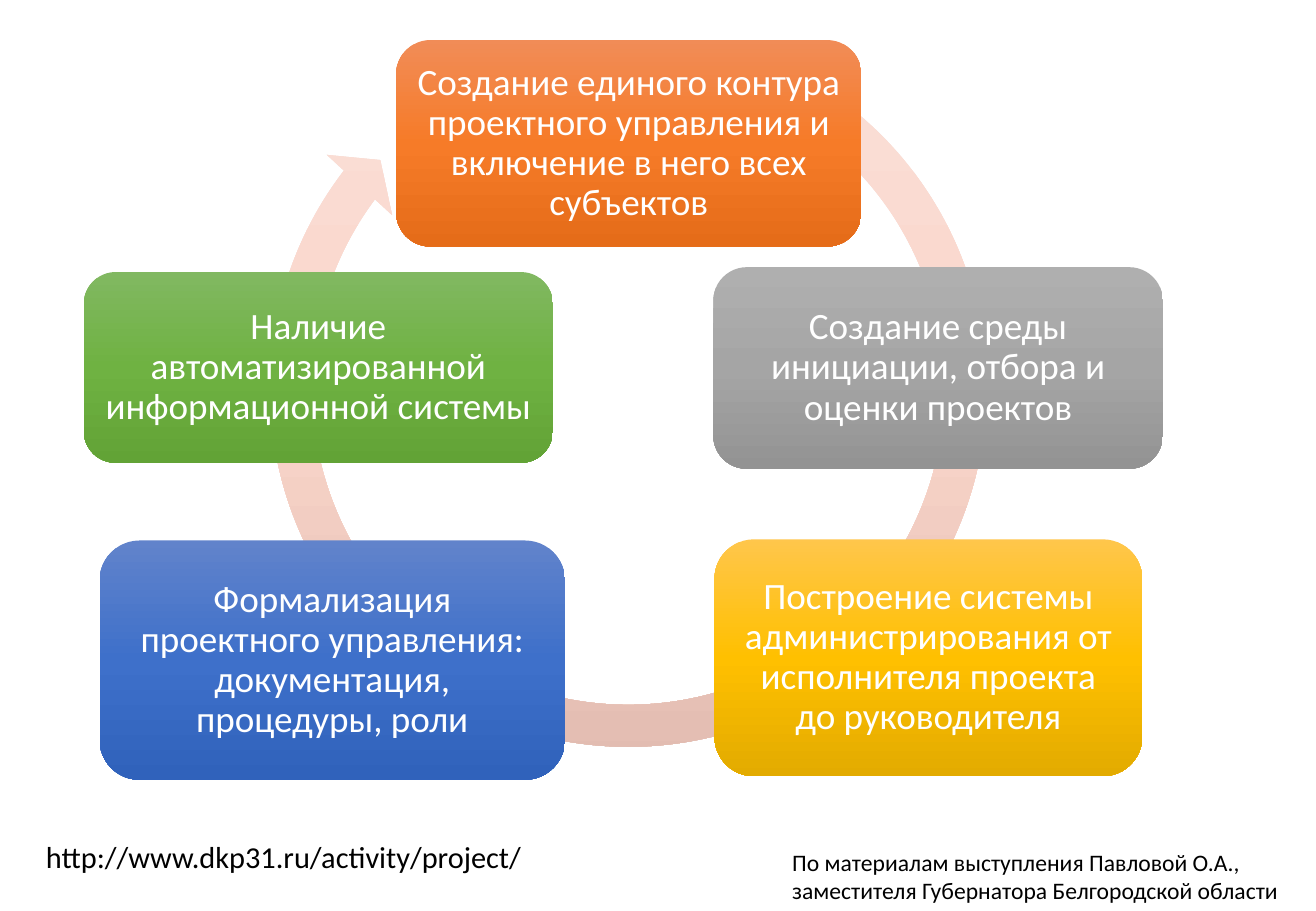
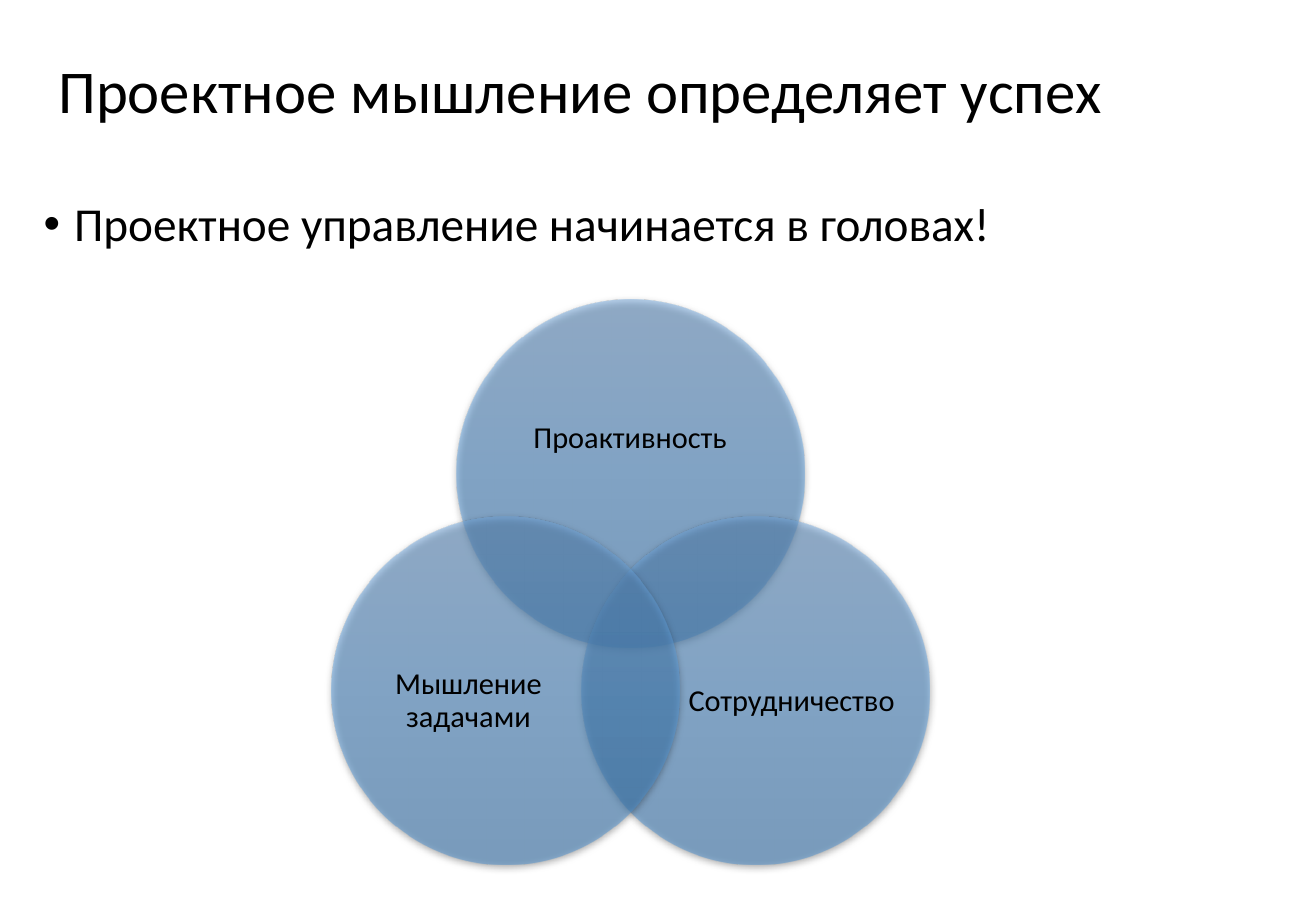
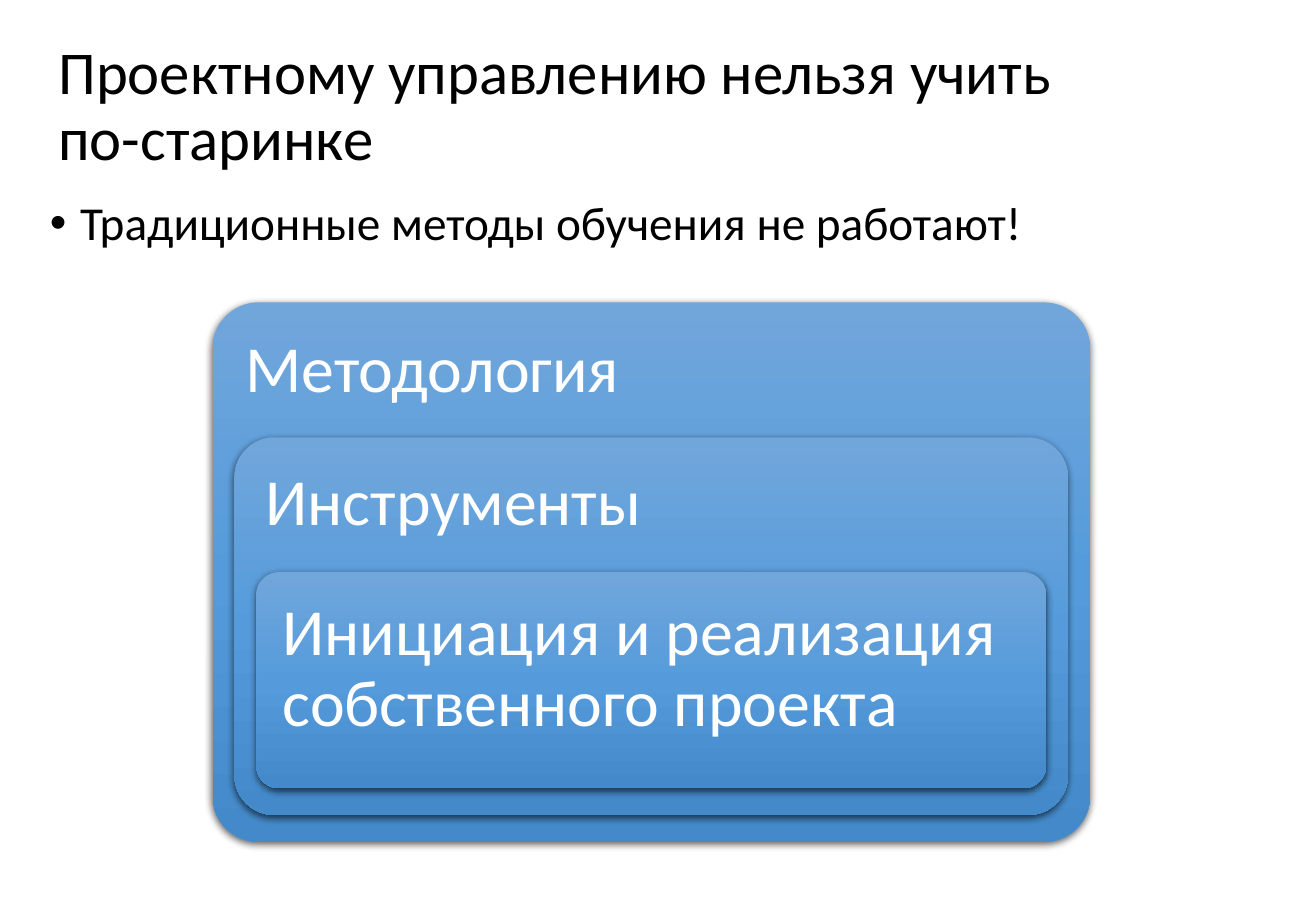
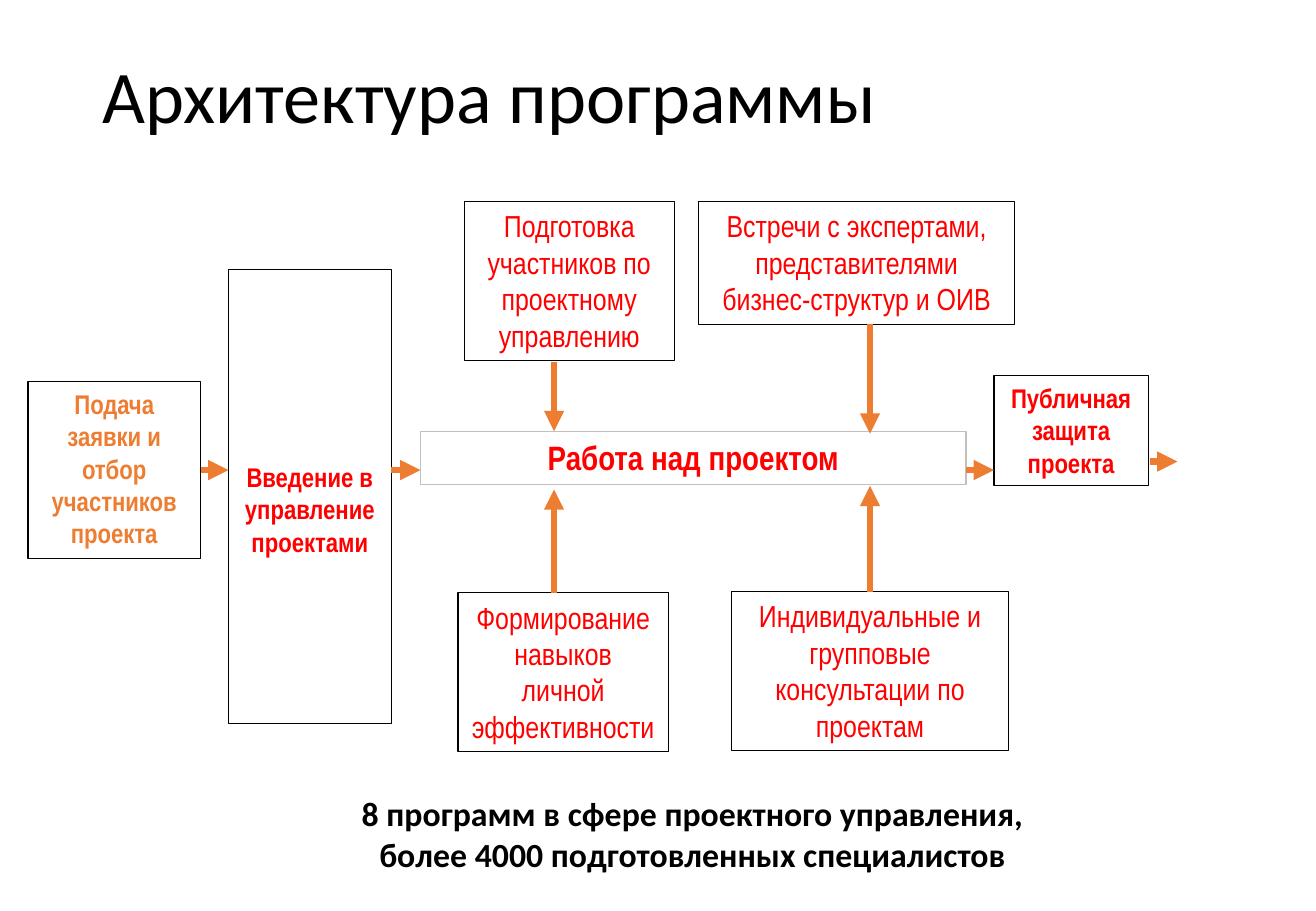
"""Build four slides on project management: a cycle, a Venn diagram, nested frames and a flow chart."""
import dataclasses
import math
import typing

import pptx
import pptx.dml.color
import pptx.enum.shapes
import pptx.enum.text
import pptx.oxml
import pptx.oxml.ns
import pptx.util

Inches = pptx.util.Inches
Pt = pptx.util.Pt
KIND = pptx.enum.shapes.MSO_SHAPE
ALIGN = pptx.enum.text.PP_ALIGN
ANCHOR = pptx.enum.text.MSO_ANCHOR
Area = typing.Tuple[float, float, float, float]
Point = typing.Tuple[float, float]

COLORS = {
    "black": "000000",
    "white": "FFFFFF",
    "red": "FF0000",
    "orange": "ED7D31",
    "silver": "C0C0C0",
}
FADES = {
    "ring": ("FAE0D8", "FAD6CB", "E2BCB1"),
    "orange": ("F18C57", "F67B28", "E56C19"),
    "gray": ("AFAFAF", "A5A5A5", "939393"),
    "gold": ("FFC64B", "FFC000", "E3AB00"),
    "blue": ("6183CB", "3E70CA", "3062BB"),
    "green": ("81B861", "6FB242", "62A336"),
    "sky": ("71A6DB", "559BDB", "448ACA"),
}


@dataclasses.dataclass(frozen=True)
class Look:
    size: float
    color: str = "black"
    font: str = "Calibri"
    bold: bool = False
    align: typing.Any = ALIGN.LEFT
    anchor: typing.Any = ANCHOR.TOP
    space: float = 1.0
    pad: Area = (0.1, 0.05, 0.1, 0.05)


@dataclasses.dataclass(frozen=True)
class Card:
    area: Area
    text: str
    fade: str


@dataclasses.dataclass(frozen=True)
class Step:
    area: Area
    text: str
    look: Look
    edge: str = "black"


@dataclasses.dataclass(frozen=True)
class Arrow:
    start: Point
    end: Point
    step: str = ""
    side: int = 0


TITLE = Look(36, anchor=ANCHOR.MIDDLE, space=0.9)
BODY = Look(28, space=0.9)
CARD = Look(22, "white", align=ALIGN.CENTER, anchor=ANCHOR.MIDDLE, space=0.9, pad=(0.09,) * 4)
VENN = Look(18, align=ALIGN.CENTER, anchor=ANCHOR.MIDDLE, space=0.9, pad=(0,) * 4)
NEST = Look(39, "white", space=0.9, pad=(0.16,) * 4)
TASK = Look(18, "red", "Arial Narrow", align=ALIGN.CENTER)
STAGE = dataclasses.replace(TASK, size=16, bold=True)

CARDS = (
    Card((3.26, 0.33, 3.83, 1.7), "Создание единого контура проектного управления и включение в него всех субъектов", "orange"),
    Card((5.87, 2.2, 3.7, 1.66), "Создание среды инициации, отбора и оценки проектов", "gray"),
    Card((5.88, 4.44, 3.52, 1.95), "Построение системы администрирования от исполнителя проекта до руководителя", "gold"),
    Card((0.82, 4.45, 3.83, 1.97), "Формализация проектного управления: документация, процедуры, роли", "blue"),
    Card((0.69, 2.24, 3.86, 1.57), "Наличие автоматизированной информационной системы", "green"),
)
STEPS = {
    "work": Step((3.46, 3.55, 4.49, 0.44), "Работа над проектом", dataclasses.replace(STAGE, size=20), "silver"),
    "apply": Step((0.23, 3.14, 1.42, 1.46), "Подача заявки и отбор участников проекта", dataclasses.replace(STAGE, color="orange")),
    "intro": Step((1.88, 2.22, 1.34, 3.74), "Введение в управление проектами", dataclasses.replace(STAGE, pad=(0.1, 1.57, 0.1, 0.05))),
    "train": Step((3.82, 1.66, 1.73, 1.31), "Подготовка участников по проектному управлению", TASK),
    "skills": Step((3.77, 4.88, 1.73, 1.31), "Формирование навыков личной эффективности", TASK),
    "advice": Step((6.02, 4.87, 2.28, 1.31), "Индивидуальные и групповые консультации по проектам", TASK),
    "defence": Step((8.18, 3.09, 1.27, 0.91), "Публичная защита проекта", STAGE),
    "meet": Step((5.75, 1.66, 2.6, 1.01), "Встречи с экспертами, представителями бизнес-структур и ОИВ", TASK),
}
ARROWS = (
    Arrow((1.65, 3.87), (1.88, 3.87), "apply", 3),
    Arrow((3.22, 3.87), (3.46, 3.87)),
    Arrow((7.95, 3.87), (8.18, 3.87)),
    Arrow((9.46, 3.8), (9.69, 3.8)),
    Arrow((4.56, 2.98), (4.56, 3.55)),
    Arrow((7.16, 2.67), (7.16, 3.57)),
    Arrow((4.56, 4.88), (4.56, 4.03)),
    Arrow((7.16, 4.87), (7.16, 4.0), "advice", 0),
)


def put(target: typing.Any, values: typing.Dict[str, typing.Any]) -> None:
    for name, value in values.items():
        setattr(target, name, value)


def paint(name: str) -> pptx.dml.color.RGBColor:
    return pptx.dml.color.RGBColor.from_string(COLORS[name])


def node(xml: str) -> typing.Any:
    return pptx.oxml.parse_xml(xml.replace(" ", f" {pptx.oxml.ns.nsdecls('a')} ", 1))


def write(shape: typing.Any, lines: typing.Sequence[str], look: Look) -> None:
    frame = shape.text_frame
    left, top, right, base = map(Inches, look.pad)
    put(frame, {
        "word_wrap": True,
        "auto_size": pptx.enum.text.MSO_AUTO_SIZE.NONE,
        "vertical_anchor": look.anchor,
        "margin_left": left,
        "margin_top": top,
        "margin_right": right,
        "margin_bottom": base,
    })
    for rank, line in enumerate(lines):
        para = frame.add_paragraph() if rank else frame.paragraphs[0]
        put(para, {"text": line, "alignment": look.align, "line_spacing": look.space, "space_before": Pt(0)})
        for run in para.runs:
            put(run.font, {"size": Pt(look.size), "name": look.font, "bold": look.bold})
            run.font.color.rgb = paint(look.color)


def place(shape: typing.Any, area: Area) -> None:
    put(shape, dict(zip(("left", "top", "width", "height"), map(Inches, area))))


def head(slide: typing.Any, text: str, area: Area, look: Look = TITLE) -> None:
    place(slide.shapes.title, area)
    write(slide.shapes.title, [text], look)


def point(slide: typing.Any, text: str, area: Area) -> None:
    body = slide.placeholders[1]
    place(body, area)
    props = body.text_frame.paragraphs[0]._p.get_or_add_pPr()
    props.set("marL", str(Inches(0.25)))
    props.set("indent", str(Inches(-0.25)))
    write(body, [text], BODY)


def label(slide: typing.Any, lines: typing.Sequence[str], area: Area, look: Look) -> None:
    write(slide.shapes.add_textbox(*map(Inches, area)), lines, look)


def form(slide: typing.Any, kind: typing.Any, area: Area) -> typing.Any:
    shape = slide.shapes.add_shape(kind, *map(Inches, area))
    shape.shadow.inherit = False
    return shape


def shade(slide: typing.Any, kind: typing.Any, area: Area, fade: str, alpha: int = 100, cast: bool = False) -> typing.Any:
    shape = form(slide, kind, area)
    shape.line.fill.background()
    shape.fill.gradient()
    shape.fill.gradient_angle = 270
    stops = shape.element.xpath("./p:spPr/a:gradFill/a:gsLst")[0]
    stops.clear()
    for rank, color in enumerate(FADES[fade]):
        stops.append(node(
            f'<a:gs pos="{rank * 50000}"><a:srgbClr val="{color}">'
            f'<a:alpha val="{alpha * 1000}"/></a:srgbClr></a:gs>'
        ))
    if cast:
        shape.element.xpath("./p:spPr/a:effectLst")[0].append(node(
            f'<a:outerShdw blurRad="{Pt(4.5)}" dist="{Pt(1.5)}" dir="5400000" rotWithShape="0">'
            f'<a:srgbClr val="{COLORS["black"]}"><a:alpha val="63000"/></a:srgbClr></a:outerShdw>'
        ))
    return shape


def link(slide: typing.Any, arrow: Arrow, boxes: typing.Dict[str, typing.Any]) -> None:
    ends = map(Inches, arrow.start + arrow.end)
    line = slide.shapes.add_connector(pptx.enum.shapes.MSO_CONNECTOR.STRAIGHT, *ends)
    line.line.width = Pt(4)
    line.line.color.rgb = paint("orange")
    line.line._get_or_add_ln().append(node('<a:tailEnd type="triangle"/>'))
    line.element.spPr.append(node("<a:effectLst />"))
    if arrow.step:
        line.begin_connect(boxes[arrow.step], arrow.side)


def cycle(slide: typing.Any) -> None:
    ring = shade(slide, KIND.CIRCULAR_ARROW, (2.03, 0.06, 6.28, 6.28), "ring")
    for rank, value in enumerate((0.055, 3.307, 130.307, 178.581, 0.058)):
        ring.adjustments[rank] = value
    for card in CARDS:
        write(shade(slide, KIND.ROUNDED_RECTANGLE, card.area, card.fade), [card.text], CARD)
    label(slide, ("По материалам выступления Павловой О.А.,", "заместителя Губернатора Белгородской области"),
          (6.42, 6.93, 4.39, 0.57), Look(14))
    label(slide, ["http://www.dkp31.ru/activity/project/"], (0.28, 6.85, 4.75, 0.4), Look(18))


def venn(slide: typing.Any) -> None:
    head(slide, "Проектное мышление определяет успех", (0.38, 0.31, 10.29, 0.92))
    point(slide, "Проектное управление начинается в головах!", (0.26, 1.6, 10.29, 4.95))
    size, side = 2.86, 2.06
    drop = side * math.sin(math.pi / 3)
    parts = (
        (0, 0, "Проактивность", (4.14, 2.97, 2.09, 1.29)),
        (side / 2, drop, "Сотрудничество", (5.66, 4.99, 1.71, 1.57)),
        (-side / 2, drop, "Мышление задачами", (3.0, 4.99, 1.71, 1.57)),
    )
    for right, down, text, area in parts:
        shade(slide, KIND.OVAL, (3.76 + right, 2.47 + down, size, size), "sky", 50, True)
        label(slide, [text], area, VENN)


def nest(slide: typing.Any) -> None:
    head(slide, "Проектному управлению нельзя учить\vпо-старинке", (0.38, 0.43, 10.29, 0.92))
    point(slide, "Традиционные методы обучения не работают!", (0.31, 1.59, 10.29, 4.95))
    names = ("Методология", "Инструменты", "Инициация и реализация собственного проекта")
    for rank, name in enumerate(names):
        area = (1.75 + 0.18 * rank, 2.49 + 1.11 * rank, 7.22 - 0.36 * rank, 4.44 - 1.33 * rank)
        frame = shade(slide, KIND.ROUNDED_RECTANGLE, area, "sky", cast=True)
        frame.adjustments[0] = 0.105 if rank else 0.085
        write(frame, [name], NEST)


def flow(slide: typing.Any) -> None:
    head(slide, "Архитектура программы", (0.74, 0.4, 9.34, 0.83), dataclasses.replace(TITLE, size=44))
    boxes = {}
    for name, step in STEPS.items():
        box = form(slide, KIND.RECTANGLE, step.area)
        box.fill.background()
        box.line.width = Pt(0.75)
        box.line.color.rgb = paint(step.edge)
        write(box, [step.text], step.look)
        boxes[name] = box
    for arrow in ARROWS:
        link(slide, arrow, boxes)
    label(slide, ("8 программ в сфере проектного управления,", "более 4000 подготовленных специалистов"),
          (0.57, 6.48, 10.26, 0.77), Look(20, bold=True, align=ALIGN.CENTER))


def main() -> None:
    deck = pptx.Presentation()
    put(deck, {"slide_width": Inches(10.83), "slide_height": Inches(7.5)})
    for draw, layout in ((cycle, 6), (venn, 1), (nest, 1), (flow, 5)):
        draw(deck.slides.add_slide(deck.slide_layouts[layout]))
    deck.save("out.pptx")


if __name__ == "__main__":
    main()
